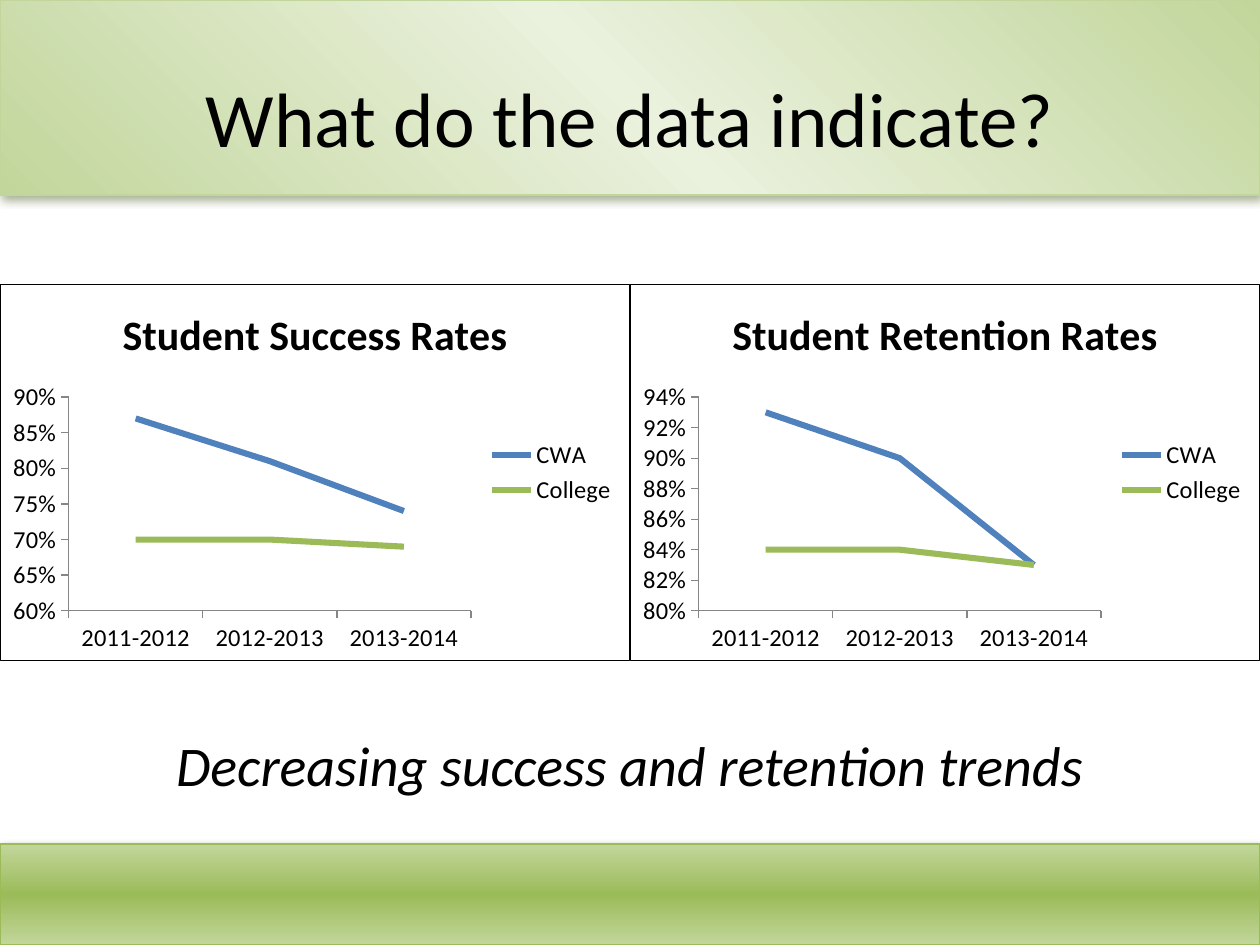
from lxml import etree
from pptx import Presentation
from pptx.chart.data import CategoryChartData
from pptx.dml.color import RGBColor
from pptx.enum.chart import XL_CHART_TYPE, XL_LEGEND_POSITION, XL_TICK_MARK
from pptx.enum.shapes import MSO_SHAPE
from pptx.enum.text import MSO_ANCHOR, PP_ALIGN
from pptx.oxml import parse_xml
from pptx.util import Pt

LINE_CHART = XL_CHART_TYPE.LINE
LEGEND_RIGHT = XL_LEGEND_POSITION.RIGHT
TICK_OUT, TICK_NONE = XL_TICK_MARK.OUTSIDE, XL_TICK_MARK.NONE
RECTANGLE = MSO_SHAPE.RECTANGLE
TOP, MIDDLE = MSO_ANCHOR.TOP, MSO_ANCHOR.MIDDLE
CENTER = PP_ALIGN.CENTER

COLORS = {"text": "000000", "pale": "EAF1DD", "light": "C2D69B", "green": "9BBB59",
          "blue": "4F81BD", "shade": "4E6128", "axis": "868686"}
FONT = "Calibri"
DRAWING_NS = 'xmlns:a="http://schemas.openxmlformats.org/drawingml/2006/main"'
CHART_NS = 'xmlns:c="http://schemas.openxmlformats.org/drawingml/2006/chart"'

SLIDE_WIDTH, SLIDE_HEIGHT = 720, 540
YEARS = ["2011-2012", "2012-2013", "2013-2014"]
SERIES_COLORS = {"CWA": "blue", "College": "green"}
CHARTS = [
    {"title": "Student Success Rates", "scale": (0.6, 0.9, 0.05),
     "rates": {"CWA": [0.87, 0.81, 0.74], "College": [0.7, 0.7, 0.69]}},
    {"title": "Student Retention Rates", "scale": (0.8, 0.94, 0.02),
     "rates": {"CWA": [0.93, 0.9, 0.83], "College": [0.84, 0.84, 0.83]}},
]


def color(name):
    return RGBColor.from_string(COLORS[name])


def format_font(font, **values):
    for name, value in {"name": FONT, **values}.items():
        setattr(font, name, value)
    font.color.rgb = color("text")


def add_band(page, box, middle, edge, angle, opacity):
    """Draw a bar shaded from light through middle to light, with a soft shadow."""
    band = page.shapes.add_shape(RECTANGLE, *map(Pt, box))
    band.shadow.inherit = False
    band.fill.gradient()
    stops = band.fill.gradient_stops
    gradient = band._element.spPr.find("{*}gradFill")
    stop_list = gradient.find("{*}gsLst")
    for stop in list(stop_list):
        stop_list.remove(stop)
    for position, name in ((0, "light"), (50, middle), (100, "light")):
        stop_list.append(parse_xml(
            f'<a:gs {DRAWING_NS} pos="{position * 1000}">'
            f'<a:srgbClr val="{COLORS[name]}"/></a:gs>'))
    gradient.find("{*}lin").set("ang", str(angle * 60000))
    band.line.color.rgb = color(edge)
    band.line.width = Pt(1)
    effects = band._element.spPr.find("{*}effectLst")
    effects.append(parse_xml(
        f'<a:outerShdw {DRAWING_NS} blurRad="{Pt(5)}" dist="{Pt(2.3)}" '
        f'dir="{65 * 60000}" algn="ctr" rotWithShape="0">'
        f'<a:srgbClr val="{COLORS["shade"]}">'
        f'<a:alpha val="{opacity * 1000}"/></a:srgbClr></a:outerShdw>'))


def add_text(page, box, text, anchor, **font_values):
    frame = page.shapes.add_textbox(*map(Pt, box)).text_frame
    frame.word_wrap = True
    frame.vertical_anchor = anchor
    para = frame.paragraphs[0]
    para.alignment = CENTER
    span = para.add_run()
    span.text = text
    format_font(span.font, **font_values)


def add_border(chart):
    border = parse_xml(
        f'<c:spPr {CHART_NS} {DRAWING_NS}><a:noFill/><a:ln w="{Pt(0.75)}"><a:solidFill>'
        f'<a:srgbClr val="{COLORS["text"]}"/></a:solidFill></a:ln></c:spPr>')
    chart._chartSpace.find("{*}chart").addnext(border)


def add_rate_chart(page, box, title, scale, rates):
    data = CategoryChartData(number_format="0%")
    data.categories = YEARS
    for name, values in rates.items():
        data.add_series(name, values)
    chart = page.shapes.add_chart(LINE_CHART, *map(Pt, box), data).chart
    format_font(chart.font, size=Pt(10))
    add_border(chart)

    chart.has_title = True
    span = chart.chart_title.text_frame.paragraphs[0].add_run()
    span.text = title
    format_font(span.font, size=Pt(24), bold=True)
    chart.chart_title.include_in_layout = False

    chart.has_legend = True
    chart.legend.position = LEGEND_RIGHT
    chart.legend.include_in_layout = False
    format_font(chart.legend.font, size=Pt(14))

    for axis in (chart.category_axis, chart.value_axis):
        axis.has_major_gridlines = False
        axis.major_tick_mark = TICK_OUT
        axis.minor_tick_mark = TICK_NONE
        axis.format.line.color.rgb = color("axis")
        axis.format.line.width = Pt(0.75)
        format_font(axis.tick_labels.font, size=Pt(14))
    value_axis = chart.value_axis
    value_axis.minimum_scale, value_axis.maximum_scale, value_axis.major_unit = scale
    value_axis.tick_labels.number_format = "0%"
    value_axis.tick_labels.number_format_is_linked = False

    chart.plots[0].vary_by_categories = False
    for series in chart.plots[0].series:
        series.smooth = False
        series.format.line.color.rgb = color(SERIES_COLORS[series.name])
        series.format.line.width = Pt(3.5)


def add_chart_row(page, box):
    left, top, width, height = box
    chart_width = width / len(CHARTS)
    for index, content in enumerate(CHARTS):
        add_rate_chart(page, (left + index * chart_width, top, chart_width, height), **content)


def main():
    deck = Presentation()
    deck.slide_width, deck.slide_height = Pt(SLIDE_WIDTH), Pt(SLIDE_HEIGHT)
    page = deck.slides.add_slide(deck.slide_layouts[6])
    add_band(page, (0, 482.4, SLIDE_WIDTH, 57.6), "green", "green", 90, 75)
    add_band(page, (0, 0, SLIDE_WIDTH, 111.6), "pale", "light", 315, 50)
    add_text(page, (36, 21.6, 648, 90), "What do the data indicate?", MIDDLE, size=Pt(44))
    add_text(page, (36, 414, 648, 68.4), "Decreasing success and retention trends", TOP,
             size=Pt(32), italic=True)
    add_chart_row(page, (0, 162, SLIDE_WIDTH, 216))
    # Drop the theme's fixed scaling so the gradients follow their own angle.
    for linear in page._element.iter("{*}lin"):
        linear.set("scaled", "1")
    etree.cleanup_namespaces(page._element)
    deck.save("out.pptx")


if __name__ == "__main__":
    main()
